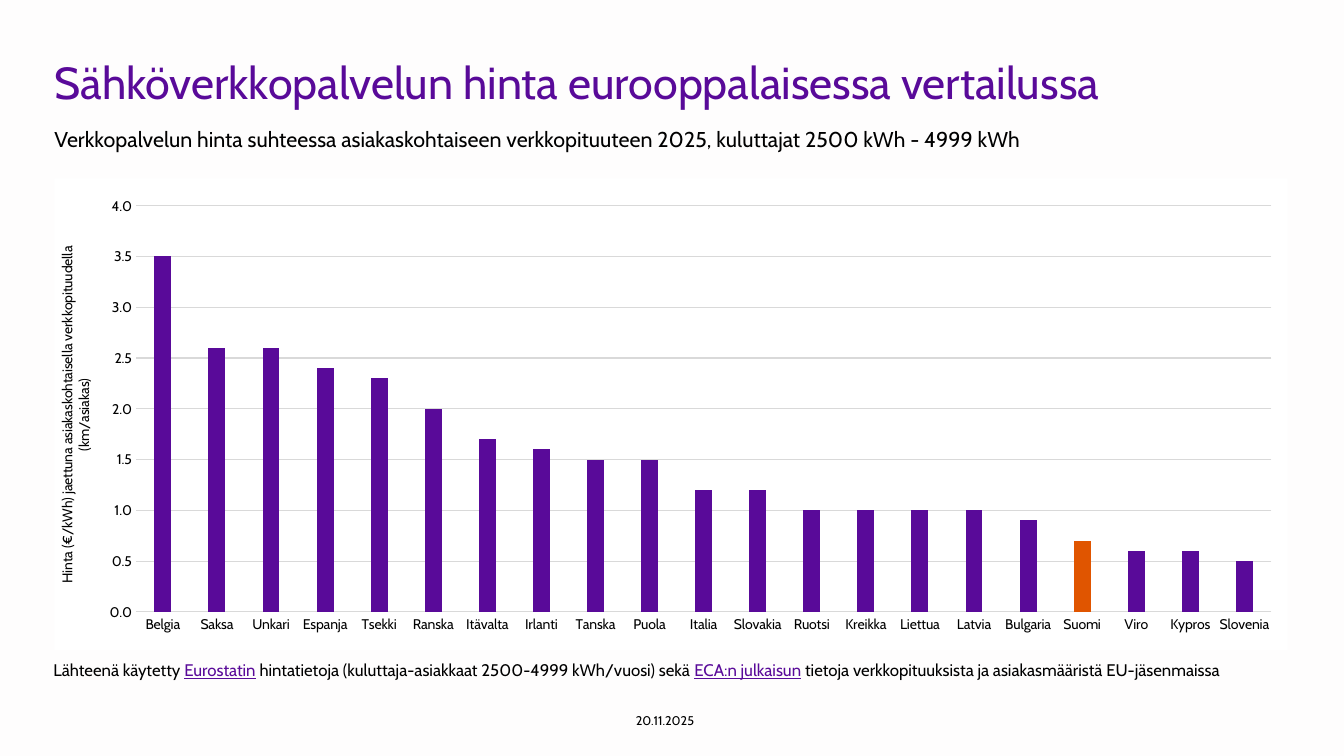
from lxml import etree
from pptx import Presentation
from pptx.chart.data import CategoryChartData
from pptx.dml.color import RGBColor
from pptx.enum.chart import XL_CHART_TYPE, XL_TICK_MARK
from pptx.enum.text import MSO_ANCHOR, MSO_AUTO_SIZE, PP_ALIGN
from pptx.oxml import parse_xml
from pptx.oxml.ns import nsdecls, qn
from pptx.util import Inches, Pt

COLUMN = XL_CHART_TYPE.COLUMN_CLUSTERED
NO_TICK = XL_TICK_MARK.NONE
TOP, MIDDLE = MSO_ANCHOR.TOP, MSO_ANCHOR.MIDDLE
LEFT, CENTER = PP_ALIGN.LEFT, PP_ALIGN.CENTER
NO_FIT = MSO_AUTO_SIZE.NONE

FONT = "Cabin"
COLORS = {"background": "FEFDFD", "purple": "590A99", "orange": "E05500",
          "black": "000000", "grid": "D9D9D9", "white": "FFFFFF"}
WIDTH, HEIGHT = 13.33, 7.5
MARGIN, CONTENT = 0.54, 12.23
PRICES = {"Belgia": 3.5, "Saksa": 2.6, "Unkari": 2.6, "Espanja": 2.4,
          "Tsekki": 2.3, "Ranska": 2.0, "Itävalta": 1.7, "Irlanti": 1.6,
          "Tanska": 1.5, "Puola": 1.5, "Italia": 1.2, "Slovakia": 1.2,
          "Ruotsi": 1.0, "Kreikka": 1.0, "Liettua": 1.0, "Latvia": 1.0,
          "Bulgaria": 0.9, "Suomi": 0.7, "Viro": 0.6, "Kypros": 0.6,
          "Slovenia": 0.5}
HIGHLIGHT = "Suomi"
PLOT = {"x": 0.066, "y": 0.058, "w": 0.921, "h": 0.861}
AXIS_TITLE = ("Hinta (€/kWh) jaettuna asiakaskohtaisella verkkopituudella "
              "(km/asiakas)")
SOURCE = [("Lähteenä käytetty ", False), ("Eurostatin", True),
          (" hintatietoja (kuluttaja-asiakkaat 2500-4999 kWh/vuosi) sekä ", False),
          ("ECA:n julkaisun", True),
          (" tietoja verkkopituuksista ja asiakasmääristä EU-jäsenmaissa", False)]


def rgb(name):
    """Return the named colour."""
    return RGBColor.from_string(COLORS[name])


def style_font(font, size, color="black"):
    """Set typeface, size and colour of a font."""
    font.name, font.size, font.bold = FONT, Pt(size), False
    font.color.rgb = rgb(color)


def place(sp, left, top, width, height):
    """Place a shape by lengths in inches."""
    sp.left, sp.top = Inches(left), Inches(top)
    sp.width, sp.height = Inches(width), Inches(height)


def write_text(sp, runs, size, color="black", align=LEFT, anchor=TOP,
               spacing=0.9, right=0.1):
    """Fill a shape with one paragraph of plain and underlined runs."""
    tf = sp.text_frame
    tf.word_wrap, tf.auto_size, tf.vertical_anchor = True, NO_FIT, anchor
    tf.margin_left, tf.margin_right = 0, Inches(right)
    tf.margin_top = tf.margin_bottom = Inches(0.05)
    p = tf.paragraphs[0]
    pPr = p._p.get_or_add_pPr()
    pPr.set("marL", "0")
    pPr.set("indent", "0")
    etree.SubElement(pPr, qn("a:buNone"))
    p.alignment, p.line_spacing, p.space_before = align, spacing, Pt(0)
    for text, marked in runs:
        r = p.add_run()
        r.text = text
        style_font(r.font, size, "purple" if marked else color)
        if marked:
            r.font.underline = True


def style_line(line, color):
    """Give a chart line its colour and width."""
    line.color.rgb = rgb(color)
    line.width = Pt(0.75)


def style_axes(chart):
    """Format both axes, the gridlines and the axis title."""
    for axis in (chart.category_axis, chart.value_axis):
        axis.major_tick_mark = axis.minor_tick_mark = NO_TICK
        style_font(axis.tick_labels.font, 10)
    style_line(chart.category_axis.format.line, "grid")
    axis = chart.value_axis
    axis.minimum_scale, axis.maximum_scale, axis.major_unit = 0, 4, 0.5
    axis.tick_labels.number_format = "0.0"
    axis.tick_labels.number_format_is_linked = False
    axis.format.line.fill.background()
    axis.has_major_gridlines = True
    style_line(axis.major_gridlines.format.line, "grid")
    p = axis.axis_title.text_frame.paragraphs[0]
    r = p.add_run()
    r.text = AXIS_TITLE
    style_font(r.font, 10)


def frame_chart(chart):
    """Fix the inner plot area and fill the chart background."""
    area = chart._chartSpace.chart.plotArea
    for old in area.findall(qn("c:layout")):
        area.remove(old)
    modes = "".join(f'<c:{k}Mode val="edge"/>' for k in "xy")
    sizes = "".join(f'<c:{k} val="{v}"/>' for k, v in PLOT.items())
    area.insert(0, parse_xml(
        f'<c:layout {nsdecls("c")}><c:manualLayout>'
        f'<c:layoutTarget val="inner"/>{modes}{sizes}'
        '</c:manualLayout></c:layout>'))
    chart._chartSpace.chart.addnext(parse_xml(
        f'<c:spPr {nsdecls("c", "a")}><a:solidFill>'
        f'<a:srgbClr val="{COLORS["white"]}"/></a:solidFill>'
        '<a:ln><a:noFill/></a:ln></c:spPr>'))


def add_price_chart(slide):
    """Add the column chart of prices by country."""
    data = CategoryChartData(number_format="0.0")
    data.categories = list(PRICES)
    data.add_series("Series 1", list(PRICES.values()))
    box = map(Inches, (MARGIN, 1.77, CONTENT, 4.68))
    chart = slide.shapes.add_chart(COLUMN, *box, data).chart
    chart.has_title = chart.has_legend = False
    style_font(chart.font, 10)
    plot = chart.plots[0]
    plot.gap_width, plot.overlap, plot.vary_by_categories = 219, -27, False
    series = plot.series[0]
    series.invert_if_negative = False
    point = series.points[list(PRICES).index(HIGHLIGHT)]
    for item, color in ((series, "purple"), (point, "orange")):
        item.format.fill.solid()
        item.format.fill.fore_color.rgb = rgb(color)
    style_axes(chart)
    frame_chart(chart)


def main():
    """Build and save the slide."""
    prs = Presentation()
    prs.slide_width, prs.slide_height = Inches(WIDTH), Inches(HEIGHT)
    slide = prs.slides.add_slide(prs.slide_layouts[3])
    slide.background.fill.solid()
    slide.background.fill.fore_color.rgb = rgb("background")
    title, subtitle, source = slide.placeholders

    place(title, MARGIN, 0.55, CONTENT, 1.09)
    write_text(title, [("Sähköverkkopalvelun hinta eurooppalaisessa vertailussa",
                        False)], 32, "purple")
    place(subtitle, MARGIN, 1.27, CONTENT, 0.3)
    write_text(subtitle, [("Verkkopalvelun hinta suhteessa asiakaskohtaiseen "
                           "verkkopituuteen 2025, kuluttajat 2500 kWh - 4999 kWh",
                           False)], 15.3, spacing=0.7)
    add_price_chart(slide)
    place(source, MARGIN - 0.01, 6.52, CONTENT, 0.23)
    write_text(source, SOURCE, 12)
    date = slide.shapes.add_textbox(0, 0, 0, 0)
    place(date, 6.04, 6.95, 1.11, 0.4)
    write_text(date, [("20.11.2025", False)], 9, align=CENTER, anchor=MIDDLE,
               spacing=1.0, right=0)
    prs.save("out.pptx")


if __name__ == "__main__":
    main()
